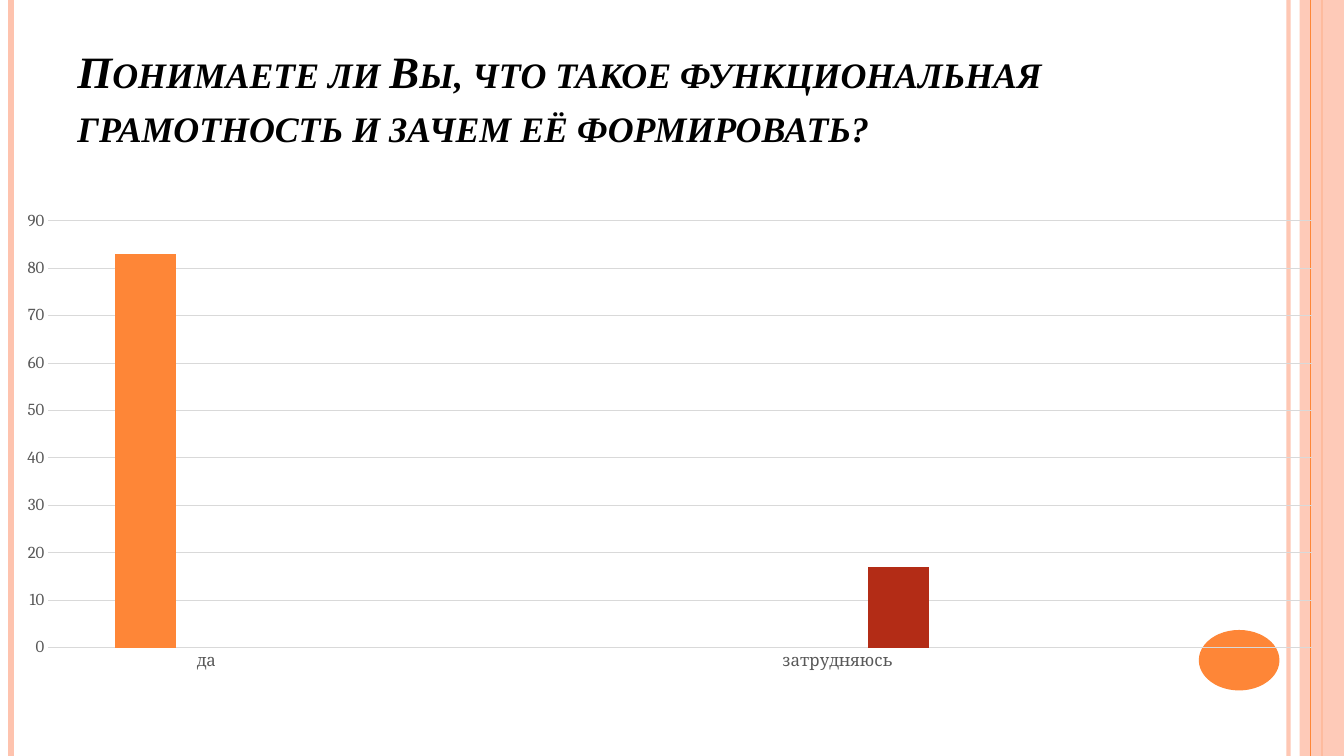
from lxml import etree
from pptx import Presentation
from pptx.chart.data import CategoryChartData
from pptx.dml.color import RGBColor
from pptx.enum.chart import XL_CHART_TYPE as ChartType, XL_TICK_MARK as TickMark
from pptx.enum.shapes import MSO_CONNECTOR as Connector, MSO_SHAPE as Shape
from pptx.enum.text import MSO_ANCHOR as Anchor
from pptx.oxml import parse_xml
from pptx.oxml.ns import nsdecls, qn
from pptx.util import Inches, Pt

COLORS = {
    "orange": "FE8637",
    "peach": "FEC3AE",
    "blue": "7598D9",
    "red": "B32C16",
    "grid": "D9D9D9",
    "label": "595959",
    "black": "000000",
}


def paint(color_format, color, opacity=100):
    """Set a solid fill or line colour, with opacity in percent."""
    color_format.solid()
    color_format.fore_color.rgb = RGBColor.from_string(COLORS[color])
    if opacity < 100:
        solid = color_format.fore_color._xFill
        alpha = etree.SubElement(solid[0], qn("a:alpha"))
        alpha.set("val", str(opacity * 1000))


def add_text(slide, text, left, top, width, height, *, font, size, color,
             bold=False, italic=False, small_caps=False, anchor=Anchor.TOP):
    frame = slide.shapes.add_textbox(
        Inches(left), Inches(top), Inches(width), Inches(height)).text_frame
    frame.word_wrap = True
    frame.vertical_anchor = anchor
    run = frame.paragraphs[0].add_run()
    run.text = text
    run.font.name = font
    run.font.size = Pt(size)
    run.font.bold = bold
    run.font.italic = italic
    run.font.color.rgb = RGBColor.from_string(COLORS[color])
    if small_caps:
        run._r.get_or_add_rPr().set("cap", "small")


presentation = Presentation()
presentation.slide_width = Inches(13.33)
presentation.slide_height = Inches(7.5)
slide = presentation.slides.add_slide(presentation.slide_layouts[6])

# Side stripes: the band lies between the vertical lines
stripes = [
    (12.78, "peach", 3, 93),
    (0.11, "peach", 4.5, 100),
    (13.11, "orange", 1.5, 100),
    ("band", "peach", 0, 87),
    (13, "orange", 0.75, 100),
]
for x, color, width, opacity in stripes:
    if x == "band":
        band = slide.shapes.add_shape(
            Shape.RECTANGLE, Inches(12.89), 0, Inches(0.44), Inches(7.5))
        band.shadow.inherit = False
        band.line.fill.background()
        paint(band.fill, color, opacity)
        continue
    stripe = slide.shapes.add_connector(
        Connector.STRAIGHT, Inches(x), 0, Inches(x), Inches(7.5))
    stripe.line.width = Pt(width)
    paint(stripe.line.fill, color, opacity)
    etree.SubElement(stripe._element.spPr, qn("a:effectLst"))

ellipse = slide.shapes.add_shape(
    Shape.OVAL, Inches(11.89), Inches(6.25), Inches(0.8), Inches(0.6))
ellipse.shadow.inherit = False
ellipse.line.fill.background()
paint(ellipse.fill, "orange")

add_text(
    slide,
    "Понимаете ли Вы, что такое функциональная грамотность и зачем её формировать?",
    0.67, 0.3, 10.89, 1.25, font="Times New Roman", size=32, color="black",
    bold=True, italic=True, small_caps=True, anchor=Anchor.BOTTOM)

# Survey chart
answers = [
    ("Series 1", "orange", (83, None, None, None)),
    ("Series 2", "blue", (None, None, None, None)),
    ("Series 3", "red", (None, None, 17, None)),
]
chart_data = CategoryChartData()
chart_data.categories = ["да", "", "затрудняюсь", ""]
for name, color, values in answers:
    chart_data.add_series(name, values)
chart = slide.shapes.add_chart(
    ChartType.COLUMN_CLUSTERED, 0, Inches(2), Inches(13.33), Inches(4.76),
    chart_data).chart
chart.has_legend = False
chart.has_title = False
chart.font.name = "Cambria"
chart.font.size = Pt(10)

plot = chart.plots[0]
plot.gap_width = 219
plot.overlap = 0
plot.vary_by_categories = False
for series, (name, color, values) in zip(plot.series, answers):
    paint(series.format.fill, color)

for axis in (chart.category_axis, chart.value_axis):
    axis.major_tick_mark = TickMark.NONE
    axis.minor_tick_mark = TickMark.NONE
    font = axis.tick_labels.font
    font.name = "Cambria"
    font.size = Pt(12)
    font.color.rgb = RGBColor.from_string(COLORS["label"])

chart.value_axis.minimum_scale = 0
chart.value_axis.maximum_scale = 90
chart.value_axis.major_unit = 10
chart.value_axis.format.line.fill.background()
for line in (chart.category_axis.format.line,
             chart.value_axis.major_gridlines.format.line):
    line.width = Pt(0.75)
    paint(line.fill, "grid")

plot_area = chart._chartSpace.chart.plotArea
for layout in plot_area.findall(qn("c:layout")):
    plot_area.remove(layout)
plot_area.insert(0, parse_xml(
    f'<c:layout {nsdecls("c")}><c:manualLayout><c:layoutTarget val="inner"/>'
    '<c:xMode val="edge"/><c:yMode val="edge"/><c:x val="0.036"/>'
    '<c:y val="0.04"/><c:w val="0.94"/><c:h val="0.89"/>'
    '</c:manualLayout></c:layout>'))

presentation.save("out.pptx")
